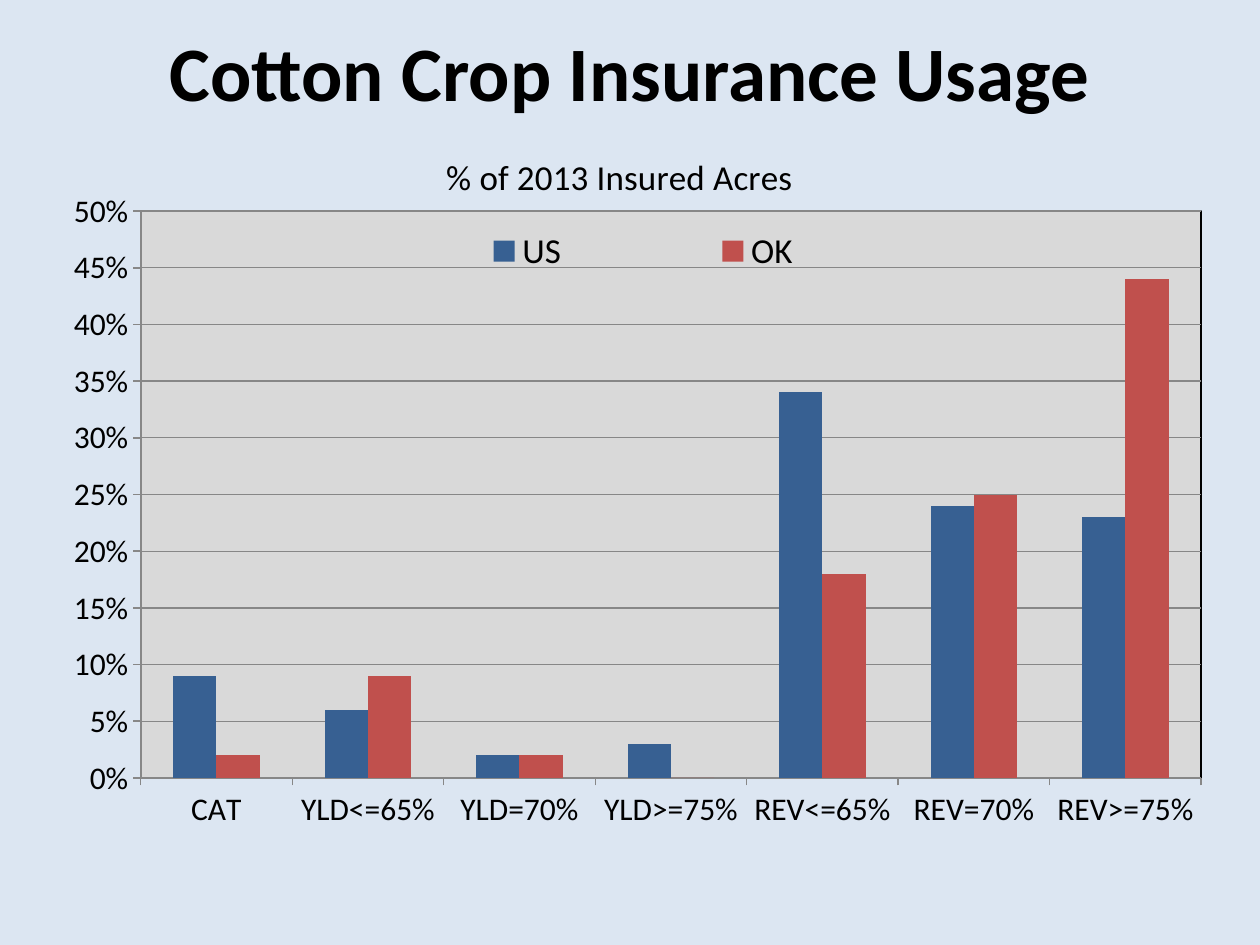
from dataclasses import dataclass

from lxml import etree
from pptx import Presentation
from pptx import util as u
from pptx.chart.data import CategoryChartData
from pptx.dml.color import RGBColor
from pptx.enum import chart as ch, text
from pptx.oxml.ns import qn


@dataclass(frozen=True)
class Theme:
    font: str = "Calibri"
    background: str = "DCE6F2"
    ink: str = "000000"
    plot: str = "D9D9D9"
    grid: str = "878787"
    us: str = "376092"
    ok: str = "C0504D"
    title_size: int = 44
    chart_title_size: int = 20
    axis_size: int = 18


THEME = Theme()

CATEGORIES = ["CAT", "YLD<=65%", "YLD=70%", "YLD>=75%",
              "REV<=65%", "REV=70%", "REV>=75%"]
ACRE_SHARES = {
    "US": (THEME.us, [0.09, 0.06, 0.02, 0.03, 0.34, 0.24, 0.23]),
    "OK": (THEME.ok, [0.02, 0.09, 0.02, 0, 0.18, 0.25, 0.44]),
}


def rgb(color):
    return RGBColor.from_string(color)


def fill_solid(fill, color):
    fill.solid()
    fill.fore_color.rgb = rgb(color)


def format_font(font, size, bold=False):
    font.name = THEME.font
    font.size = u.Pt(size)
    font.bold = bold
    font.color.rgb = rgb(THEME.ink)


def write_text(frame, words, align=text.PP_ALIGN.CENTER, **font_format):
    paragraph = frame.paragraphs[0]
    paragraph.alignment = align
    run = paragraph.add_run()
    run.text = words
    format_font(run.font, **font_format)


def place_part(part, index, inner=False, **fractions):
    """Give a chart part a manual layout in fractions of the chart."""
    for old in part.findall(qn("c:layout")):
        part.remove(old)
    layout = etree.Element(qn("c:layout"))
    manual = etree.SubElement(layout, qn("c:manualLayout"))
    if inner:
        etree.SubElement(manual, qn("c:layoutTarget")).set("val", "inner")
    for mode in ("xMode", "yMode"):
        etree.SubElement(manual, qn("c:" + mode)).set("val", "edge")
    for key, value in fractions.items():
        etree.SubElement(manual, qn("c:" + key)).set("val", str(value))
    part.insert(index, layout)


def add_title(slide, words):
    title = slide.shapes.title
    title.left, title.top = u.Pt(12), u.Pt(6)
    title.width, title.height = u.Pt(696), u.Pt(68.4)
    title.text_frame.vertical_anchor = text.MSO_ANCHOR.MIDDLE
    write_text(title.text_frame, words, size=THEME.title_size, bold=True)


def style_axes(chart):
    for axis in (chart.category_axis, chart.value_axis):
        format_font(axis.tick_labels.font, THEME.axis_size)
        axis.major_tick_mark = ch.XL_TICK_MARK.OUTSIDE
        axis.minor_tick_mark = ch.XL_TICK_MARK.NONE
        axis.format.line.color.rgb = rgb(THEME.grid)
    shares = chart.value_axis
    shares.format.line.width = u.Pt(1)
    shares.minimum_scale, shares.maximum_scale = 0, 0.5
    shares.major_unit = 0.05
    shares.tick_labels.number_format = "0%"
    shares.tick_labels.number_format_is_linked = False
    shares.has_major_gridlines = True
    shares.major_gridlines.format.line.color.rgb = rgb(THEME.grid)


def style_plot_area(chart):
    area = chart.plots[0]._element.getparent()
    place_part(area, 0, inner=True, x=0.1, y=0.107, w=0.886, h=0.75)
    properties = etree.SubElement(area, qn("c:spPr"))
    outline = etree.Element(qn("a:ln"), w=str(u.Pt(1)))
    for parent, color in ((properties, THEME.plot), (outline, THEME.ink)):
        solid = etree.SubElement(parent, qn("a:solidFill"))
        etree.SubElement(solid, qn("a:srgbClr")).set("val", color)
    properties.append(outline)


def add_usage_chart(slide):
    data = CategoryChartData(number_format="0%")
    data.categories = CATEGORIES
    for name, (_, shares) in ACRE_SHARES.items():
        data.add_series(name, shares)
    chart = slide.shapes.add_chart(
        ch.XL_CHART_TYPE.COLUMN_CLUSTERED,
        u.Pt(12), u.Pt(74.4), u.Pt(684), u.Pt(432), data).chart
    format_font(chart.font, THEME.axis_size)

    # Columns
    plot = chart.plots[0]
    plot.gap_width, plot.overlap = 150, 0
    plot.vary_by_categories = False
    for series in plot.series:
        fill_solid(series.format.fill, ACRE_SHARES[series.name][0])
    style_axes(chart)
    style_plot_area(chart)

    # Chart title, over the plot
    chart.has_title = True
    heading = chart.chart_title
    write_text(heading.text_frame, "% of 2013 Insured Acres",
               size=THEME.chart_title_size)
    place_part(heading._element, 1, x=0.35, y=0.02)
    heading._element.find(qn("c:overlay")).set("val", "1")

    # Legend, inside the plot
    chart.has_legend = True
    legend = chart.legend
    legend.position = ch.XL_LEGEND_POSITION.RIGHT
    legend.include_in_layout = False
    format_font(legend.font, THEME.chart_title_size)
    place_part(legend._element, 1, x=0.27, y=0.13, w=0.5, h=0.06)


def main():
    prs = Presentation()
    prs.slide_width, prs.slide_height = u.Pt(720), u.Pt(540)
    slide = prs.slides.add_slide(prs.slide_layouts[5])
    fill_solid(slide.background.fill, THEME.background)
    add_title(slide, "Cotton Crop Insurance Usage")
    add_usage_chart(slide)
    prs.save("out.pptx")


if __name__ == "__main__":
    main()
